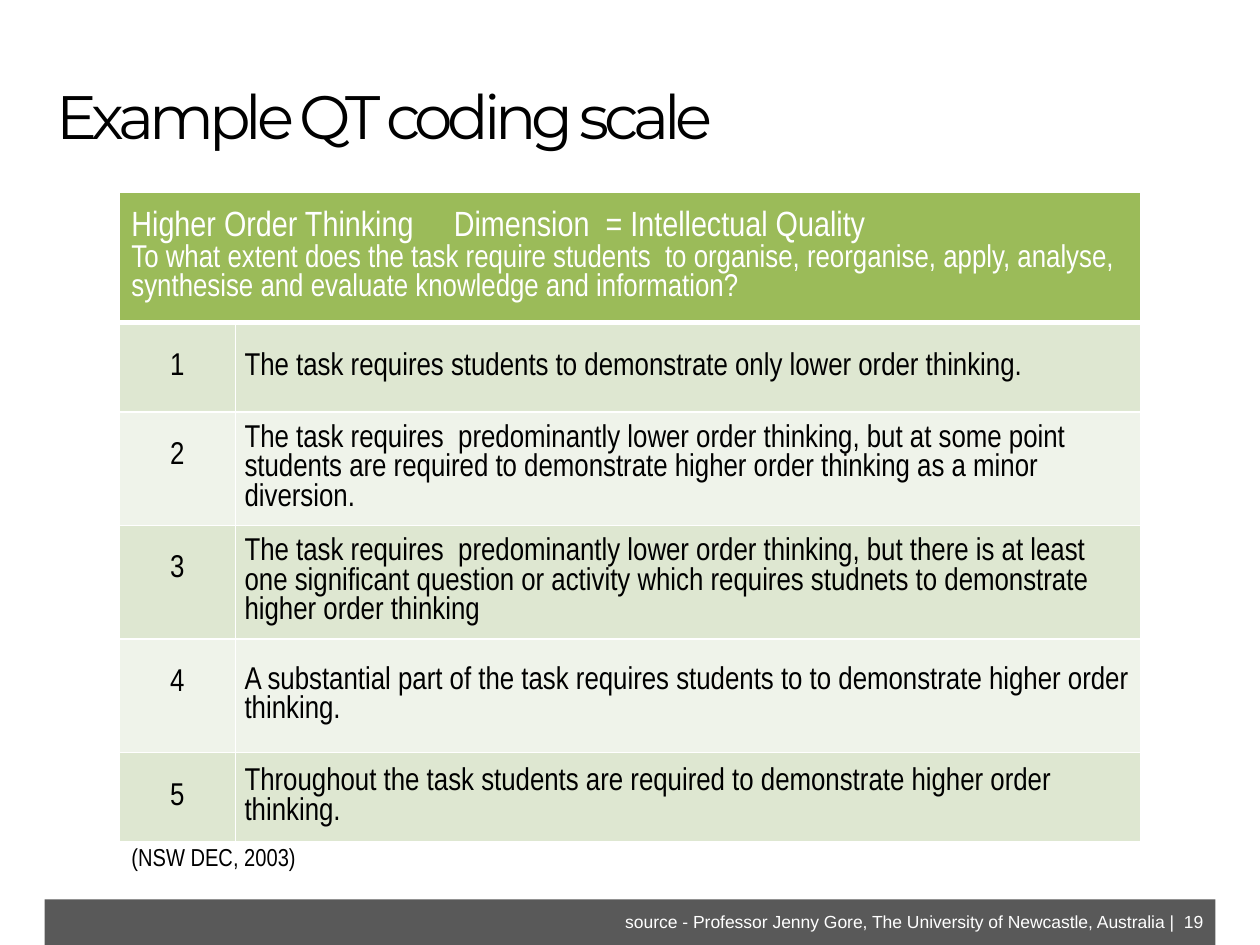
from lxml import etree
from pptx import Presentation, util as u
from pptx.dml.color import RGBColor
from pptx.enum import shapes, text
from pptx.oxml.ns import qn

COLOURS = {
    "black": "000000",
    "white": "FFFFFF",
    "bar": "595959",
    "header": "9BBB59",
    "odd": "DEE7D1",
    "even": "EFF3EA",
}
NARROW = "Arial Narrow"
HEADER = [
    ("Higher Order Thinking\tDimension  = Intellectual Quality", 20),
    ("To what extent does the task require students  to organise, reorganise, "
     "apply, analyse, synthesise and evaluate knowledge and information?", 18),
]
LEVELS = [
    ("The task requires students to demonstrate only lower order thinking.", 1.8),
    ("The task requires  predominantly lower order thinking, but at some point "
     "students are required to demonstrate higher order thinking as a minor "
     "diversion.", 2.29),
    ("The task requires  predominantly lower order thinking, but there is at "
     "least one significant question or activity which requires studnets to "
     "demonstrate higher order thinking", 2.29),
    ("A substantial part of the task requires students to to demonstrate higher "
     "order thinking.", 2.29),
    ("Throughout the task students are required to demonstrate higher order "
     "thinking.", 1.8),
]


def colour(name):
    return RGBColor.from_string(COLOURS[name])


def write(para, words, size=18, font=NARROW, ink="black", align=None,
          line=None, tracking=None, tab=None):
    if tab:
        stops = etree.SubElement(para._p.get_or_add_pPr(), qn("a:tabLst"))
        etree.SubElement(stops, qn("a:tab"), pos=str(u.Cm(tab)), algn="l")
    para.alignment = align
    para.line_spacing = line
    span = para.add_run()
    span.text = words
    span.font.size = u.Pt(size)
    span.font.name = font
    span.font.bold = False
    span.font.color.rgb = colour(ink)
    if tracking:
        span._r.get_or_add_rPr().set("spc", str(tracking * 100))


def add_text(page, left, top, width, height, words, grow=False, **style):
    box = page.shapes.add_textbox(u.Cm(left), u.Cm(top), u.Cm(width), u.Cm(height))
    frame = box.text_frame
    frame.word_wrap = True
    if grow:
        frame.auto_size = text.MSO_AUTO_SIZE.SHAPE_TO_FIT_TEXT
    write(frame.paragraphs[0], words, **style)


def add_bar(page, left, top, width, height):
    bar = page.shapes.add_shape(shapes.MSO_SHAPE.RECTANGLE, u.Cm(left), u.Cm(top),
                                u.Cm(width), u.Cm(height))
    bar.shadow.inherit = False
    bar.fill.solid()
    bar.fill.fore_color.rgb = colour("bar")
    bar.line.fill.background()


def style_cell(cell, fill, side=0.18, edge=0, middle=True, bottom=1):
    cell.margin_left = cell.margin_right = u.Cm(side)
    cell.margin_top = cell.margin_bottom = u.Cm(edge)
    cell.vertical_anchor = text.MSO_ANCHOR.MIDDLE if middle else text.MSO_ANCHOR.TOP
    properties = cell._tc.get_or_add_tcPr()
    for tag, width in (("lnL", 1), ("lnR", 1), ("lnT", 1), ("lnB", bottom)):
        border = etree.SubElement(properties, qn(f"a:{tag}"), w=str(u.Pt(width)))
        solid = etree.SubElement(border, qn("a:solidFill"))
        etree.SubElement(solid, qn("a:srgbClr"), val=COLOURS["white"])
    cell.fill.solid()
    cell.fill.fore_color.rgb = colour(fill)


def add_scale(page, left, top, widths, header_height):
    heights = [header_height] + [height for _, height in LEVELS]
    table = page.shapes.add_table(len(heights), len(widths), u.Cm(left), u.Cm(top),
                                  u.Cm(sum(widths)), u.Cm(sum(heights))).table
    for column, width in zip(table.columns, widths):
        column.width = u.Cm(width)
    for row, height in zip(table.rows, heights):
        row.height = u.Cm(height)

    header = table.cell(0, 0)
    header.merge(table.cell(0, 1))
    for cell in table.rows[0].cells:
        style_cell(cell, "header", side=0.25, edge=0.13, bottom=3)
    (heading, heading_size), (question, question_size) = HEADER
    frame = header.text_frame
    write(frame.paragraphs[0], heading, size=heading_size, ink="white", tab=6.5)
    write(frame.add_paragraph(), question, size=question_size, ink="white")

    for level, (description, _) in enumerate(LEVELS, 1):
        fill = "odd" if level % 2 else "even"
        number, detail = table.rows[level].cells
        style_cell(number, fill, middle=False)
        style_cell(detail, fill)
        write(number.text_frame.paragraphs[0], str(level),
              align=text.PP_ALIGN.CENTER, line=2.0)
        write(detail.text_frame.paragraphs[0], description)


def main():
    deck = Presentation()
    deck.slide_width, deck.slide_height = u.Cm(25.4), u.Cm(19.05)
    page = deck.slides.add_slide(deck.slide_layouts[6])
    add_text(page, 0.9, 1.63, 22.8, 1.8, "Example QT coding scale", size=35,
             font="Montserrat", line=0.9, tracking=-3)
    add_bar(page, 0.9, 18.13, 23.6, 0.92)
    add_text(page, 2.4, 16.92, 20.6, 0.9, "(NSW DEC, 2003)", size=14, line=0.9)
    add_scale(page, 2.4, 3.87, (2.35, 18.25), 2.6)
    add_text(page, 9.1, 18.24, 15.4, 0.68,
             "source - Professor Jenny Gore, The University of Newcastle, Australia |  19",
             grow=True, size=10, font="Arial", ink="white", align=text.PP_ALIGN.RIGHT)
    deck.save("out.pptx")


if __name__ == "__main__":
    main()
